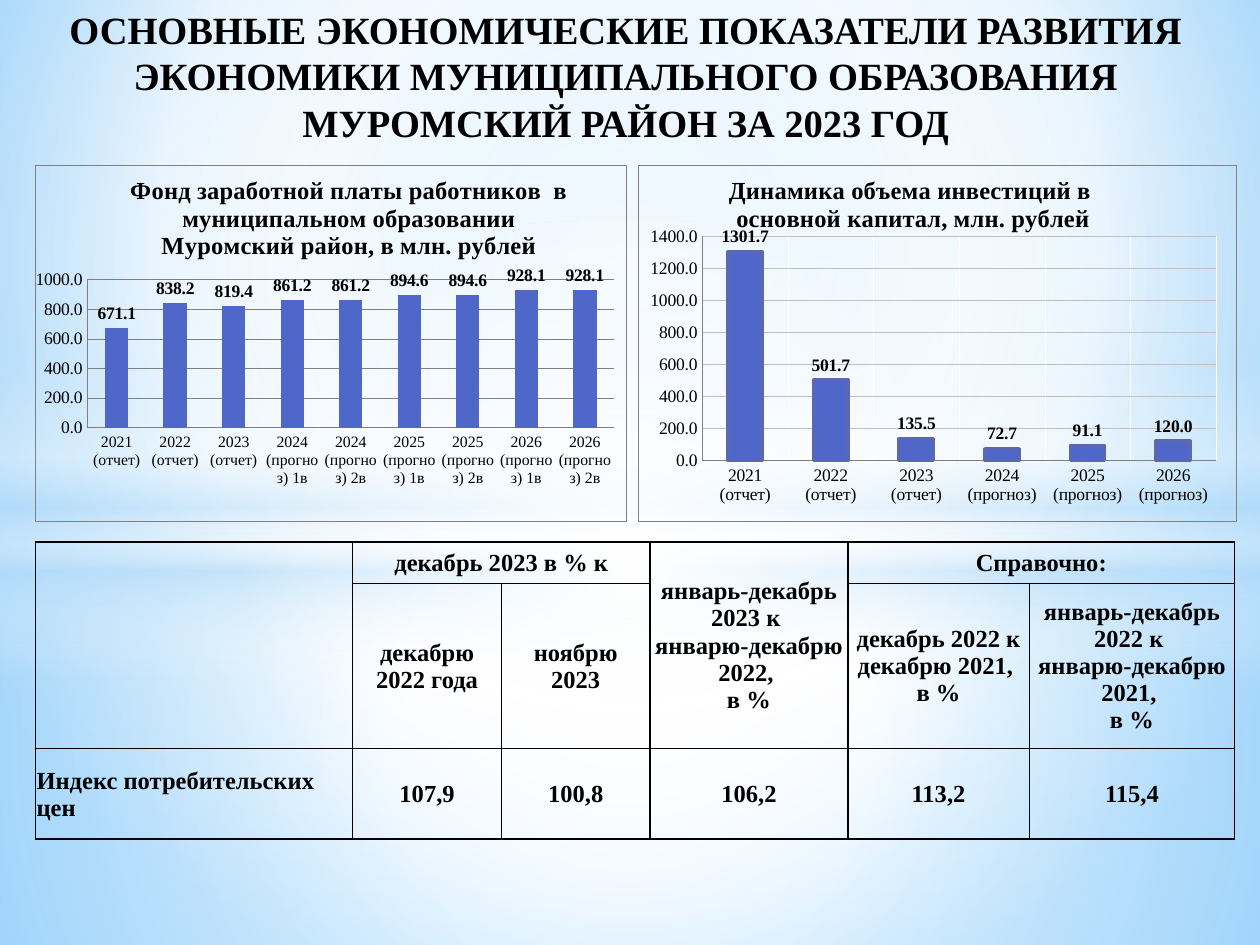
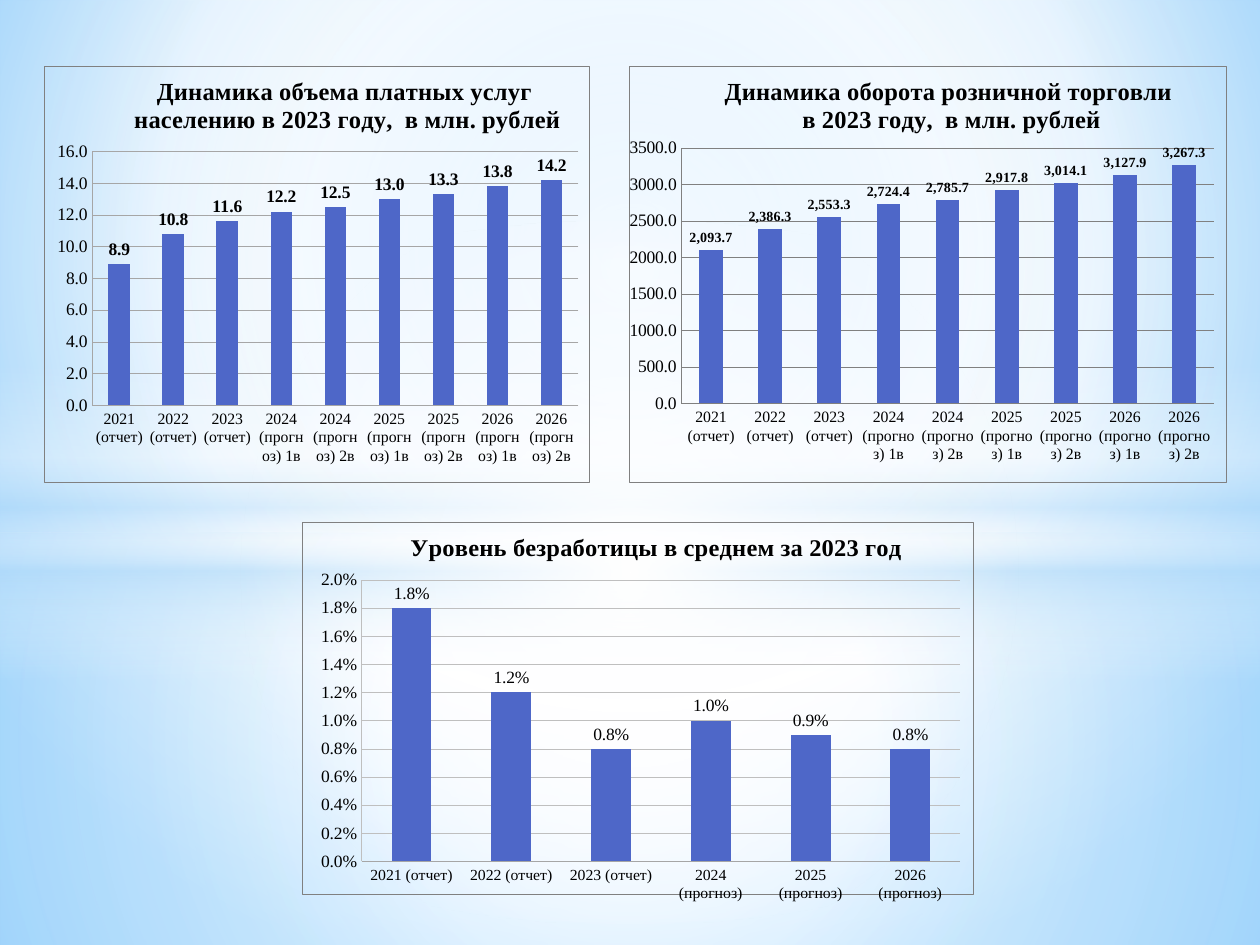
"""Builds two slides on the economy of the Murom district: charts and a price index table."""
from dataclasses import dataclass

from lxml import etree
from pptx import Presentation
from pptx.chart.data import CategoryChartData
from pptx.dml.color import RGBColor
from pptx.enum.chart import XL_CHART_TYPE, XL_LABEL_POSITION, XL_TICK_MARK
from pptx.enum.shapes import MSO_SHAPE
from pptx.enum.text import MSO_ANCHOR, PP_ALIGN
from pptx.oxml import parse_xml
from pptx.oxml.ns import nsdecls, qn
from pptx.util import Inches, Pt

BARS = XL_CHART_TYPE.COLUMN_CLUSTERED
ABOVE = XL_LABEL_POSITION.OUTSIDE_END
NO_TICK = XL_TICK_MARK.NONE
RECT, OVAL = MSO_SHAPE.RECTANGLE, MSO_SHAPE.OVAL
MIDDLE = MSO_ANCHOR.MIDDLE
LEFT, CENTER = PP_ALIGN.LEFT, PP_ALIGN.CENTER


@dataclass(frozen=True)
class Theme:
    font: str = "Times New Roman"
    ink: str = "000000"
    bar: str = "4E67C8"
    rim: str = "5968B0"
    gray: str = "808080"
    mid: str = "A6A6A6"
    pale: str = "BFBFBF"
    white: str = "FFFFFF"
    sky: str = "B4DCFA"
    light: str = "9ED5FF"
    deep: str = "5BB9FF"
    head: int = 22
    body: int = 14
    text: int = 10
    small: int = 9
    tiny: int = 8
    hair: float = 0.25


T = Theme()


def paint(item, stops, box=None):
    """Fill the gradient of an element with stops of place, colour and opacity."""
    grad = item.find(".//" + qn("a:gradFill"))
    grad.clear()
    row = etree.SubElement(grad, qn("a:gsLst"))
    for place, color, alpha in stops:
        stop = etree.SubElement(row, qn("a:gs"), pos=str(place * 1000))
        tone = etree.SubElement(stop, qn("a:srgbClr"), val=color)
        if alpha < 100:
            etree.SubElement(tone, qn("a:alpha"), val=str(alpha * 1000))
    if box:
        way = etree.SubElement(grad, qn("a:path"), path="circle")
        sides = {side: str(part * 1000) for side, part in zip("ltrb", box)}
        etree.SubElement(way, qn("a:fillToRect"), **sides)
    else:
        etree.SubElement(grad, qn("a:lin"), ang="5400000", scaled="0")


def write(frame, text, size, align=CENTER):
    """Write bold text into a frame, one run a line."""
    para = frame.paragraphs[0]
    para.alignment = align
    for num, line in enumerate(text.split("\n")):
        if num:
            para.add_line_break()
        run = para.add_run()
        run.text = line
        run.font.name, run.font.size, run.font.bold = T.font, Pt(size), True
        run.font.color.rgb = RGBColor.from_string(T.ink)


deck = Presentation()
deck.slide_width, deck.slide_height = Inches(10), Inches(7.5)
unit = deck.slide_width // 100
blank = deck.slide_layouts[6]
for hold in list(blank.placeholders):
    hold.element.getparent().remove(hold.element)
slides = [deck.slides.add_slide(blank) for _ in range(2)]

blank.background.fill.gradient()
paint(blank.element, [(0, T.light, 100), (60, T.white, 100), (100, T.deep, 100)],
      (20, 10, 20, 60))
core = (50, 50, 50, 50)
bands = [
    (RECT, 42.3, 32.7, core, [(0, T.white, 91), (37, T.white, 76), (100, T.sky, 79)]),
    (RECT, 0, 42.3, core, [(0, T.white, 89), (48, T.white, 62), (100, T.sky, 79)]),
    (RECT, 29, 25, None, [(0, T.white, 0), (29, T.white, 30), (45, T.sky, 40),
                          (55, T.white, 26), (65, T.sky, 60), (100, T.white, 0)]),
    (OVAL, 17.5, 55.8, core, [(0, T.white, 100), (54, T.white, 0)]),
]
for kind, top, high, box, stops in bands:
    band = slides[0].shapes.add_shape(
        kind, 0, int(top * unit), deck.slide_width, int(high * unit))
    band.shadow.inherit = False
    band.line.fill.background()
    band.fill.gradient()
    paint(band.element, stops, box)
    blank.shapes.element.append(band.element)

area = [int(part * unit) for part in (1.2, 0, 96.9, 12.1)]
title = slides[0].shapes.add_textbox(*area).text_frame
title.word_wrap = True
write(title, "ОСНОВНЫЕ ЭКОНОМИЧЕСКИЕ ПОКАЗАТЕЛИ РАЗВИТИЯ ЭКОНОМИКИ МУНИЦИПАЛЬНОГО "
      "ОБРАЗОВАНИЯ МУРОМСКИЙ РАЙОН ЗА 2023 ГОД", T.head)

rows = [
    ["", "декабрь 2023 в % к", "", "январь-декабрь 2023 к \nянварю-декабрю 2022, \nв %",
     "Справочно:", ""],
    ["", "декабрю\n2022 года", "ноябрю\n2023", "", "декабрь 2022 к декабрю 2021, \nв %",
     "январь-декабрь 2022 к \nянварю-декабрю 2021, \nв %"],
    ["Индекс потребительских цен", "107,9", "100,8", "106,2", "113,2", "115,4"],
]
wide = [25.2, 11.8, 11.8, 15.7, 14.4, 16.3]
tall = [3.3, 13.1, 7.2]
area = [int(part * unit) for part in (2.8, 43, sum(wide), sum(tall))]
grid = slides[0].shapes.add_table(len(rows), len(wide), *area).table
grid.first_row = grid.horz_banding = False
for col, size in zip(grid.columns, wide):
    col.width = int(size * unit)
for row, size in zip(grid.rows, tall):
    row.height = int(size * unit)
for r, row in enumerate(rows):
    for c, text in enumerate(row):
        cell = grid.cell(r, c)
        cell.vertical_anchor = MIDDLE
        cell.margin_left = cell.margin_right = cell.margin_top = Inches(0.01)
        cell.margin_bottom = 0
        cell.fill.background()
        if text:
            write(cell.text_frame, text, T.body, CENTER if c else LEFT)
        props = cell._tc.get_or_add_tcPr()
        for num, side in enumerate("LRTB"):
            props.insert(num, parse_xml(
                f'<a:ln{side} {nsdecls("a")} w="{Pt(1)}"><a:solidFill>'
                f'<a:srgbClr val="{T.ink}"/></a:solidFill></a:ln{side}>'))
for start, end in [((0, 0), (1, 0)), ((0, 1), (0, 2)), ((0, 3), (1, 3)), ((0, 4), (0, 5))]:
    grid.cell(*start).merge(grid.cell(*end))

past = [f"{year} (отчет)" for year in range(2021, 2024)]
plain = past + [f"{year} (прогноз)" for year in range(2024, 2027)]
split = past + [f"{year} (прогноз) {way}в" for year in range(2024, 2027) for way in (1, 2)]
base = dict(cats=split, form="0.0", tag="#,##0.0", size=T.text, bold=True,
            small=T.small, line=T.gray, axis=T.gray, net=T.gray, rim=None, left=15.4)
charts = [
    base | dict(
        page=0, at=(2.8, 13.1, 46.9, 28.3), plot=(8.8, 32.1, 89.2, 41.6), top=1000, step=200,
        name="Фонд заработной платы работников  в \nмуниципальном образовании \n"
             "Муромский район, в млн. рублей ",
        vals=[671.1, 838.2, 819.4, 861.2, 861.2, 894.6, 894.6, 928.1, 928.1]),
    base | dict(
        page=0, at=(50.6, 13.1, 47.5, 28.3), plot=(10.8, 19.9, 85.9, 63), top=1400, step=200,
        name="Динамика объема инвестиций в \nосновной капитал, млн. рублей",
        vals=[1301.7, 501.7, 135.5, 72.7, 91.1, 120], left=14.6,
        cats=plain, tag="0.0", small=T.text, net=T.pale, rim=T.rim),
    base | dict(
        page=1, at=(3.5, 5.2, 43.3, 33.1), plot=(8.8, 20.6, 89.2, 60.9), top=16, step=2,
        name="Динамика объема платных услуг \nнаселению в 2023 году,  в млн. рублей",
        vals=[8.9, 10.8, 11.6, 12.2, 12.5, 13, 13.3, 13.8, 14.2], left=15.8,
        line=T.mid, axis=T.mid, net=T.mid),
    base | dict(
        page=1, at=(49.9, 5.2, 47.4, 33.1), plot=(8.8, 19.7, 89.2, 61.4), top=3500, step=500,
        name="Динамика оборота розничной торговли \nв 2023 году,  в млн. рублей",
        vals=[2093.7, 2386.3, 2553.3, 2724.4, 2785.7, 2917.8, 3014.1, 3127.9, 3267.3],
        size=T.tiny),
    base | dict(
        page=1, at=(24, 41.4, 53.3, 30.2), plot=(8.8, 15.6, 89.2, 75.6), top=0.02, step=0.002,
        name="Уровень безработицы в среднем за 2023 год",
        vals=[0.018, 0.012, 0.008, 0.01, 0.009, 0.008], cats=plain,
        form="0.0%", tag="0.0%", bold=False, line=T.mid, axis=T.pale, net=T.pale),
]
for plan in charts:
    data = CategoryChartData()
    data.categories = plan["cats"]
    data.add_series("Series 1", plan["vals"])
    area = [int(part * unit) for part in plan["at"]]
    chart = slides[plan["page"]].shapes.add_chart(BARS, *area, data).chart
    chart.has_legend = False
    chart.has_title = True
    write(chart.chart_title.text_frame, plan["name"], T.body)

    plot = chart.plots[0]
    plot.gap_width, plot.vary_by_categories = 150, False
    bars = plot.series[0]
    bars.invert_if_negative = False
    bars.format.fill.solid()
    bars.format.fill.fore_color.rgb = RGBColor.from_string(T.bar)
    if plan["rim"]:
        bars.format.line.color.rgb = RGBColor.from_string(plan["rim"])
        bars.format.line.width = Pt(2)

    plot.has_data_labels = True
    tags = plot.data_labels
    tags.show_value, tags.position = True, ABOVE
    tags.number_format, tags.number_format_is_linked = plan["tag"], False

    cat, val = chart.category_axis, chart.value_axis
    val.minimum_scale, val.maximum_scale = 0, plan["top"]
    val.major_unit = plan["step"]
    val.tick_labels.number_format = plan["form"]
    val.tick_labels.number_format_is_linked = False
    cat.has_major_gridlines = bool(plan["rim"])
    lines = [(cat.format.line, plan["line"]), (val.format.line, plan["axis"]),
             (val.major_gridlines.format.line, plan["net"])]
    if plan["rim"]:
        lines.append((cat.major_gridlines.format.line, T.white))
    for line, color in lines:
        line.color.rgb = RGBColor.from_string(color)
        line.width = Pt(T.hair)
    for axis in (cat, val):
        axis.major_tick_mark = axis.minor_tick_mark = NO_TICK
    fonts = [(chart.font, T.text, False), (cat.tick_labels.font, plan["small"], False),
             (val.tick_labels.font, T.text, False), (tags.font, plan["size"], plan["bold"])]
    for font, size, bold in fonts:
        font.name, font.size, font.bold = T.font, Pt(size), bold
        font.color.rgb = RGBColor.from_string(T.ink)

    body = chart.element.find(qn("c:chart"))
    head, field = body.find(qn("c:title")), body.find(qn("c:plotArea"))
    turn = field.find("/".join(qn(tag) for tag in ("c:catAx", "c:txPr", "a:bodyPr")))
    turn.set("rot", "0")
    turn.set("vert", "horz")
    for item, spot, place in ((head, 1, (plan["left"], 1.6)), (field, 0, plan["plot"])):
        for old in item.findall(qn("c:layout")):
            item.remove(old)
        layout = etree.Element(qn("c:layout"))
        hand = etree.SubElement(layout, qn("c:manualLayout"))
        if item is field:
            etree.SubElement(hand, qn("c:layoutTarget"), val="inner")
        for key in "xy":
            etree.SubElement(hand, qn(f"c:{key}Mode"), val="edge")
        for key, part in zip("xywh", place):
            etree.SubElement(hand, qn(f"c:{key}"), val=f"{part / 100:.3f}")
        item.insert(spot, layout)
    frame = (f'<a:ln w="{Pt(T.hair)}"><a:solidFill><a:srgbClr val="{T.gray}"/>'
             '</a:solidFill></a:ln>')
    for add, edge in ((body.addnext, frame), (field.append, "<a:ln><a:noFill/></a:ln>")):
        add(parse_xml(f'<c:spPr {nsdecls("c", "a")}><a:noFill/>{edge}</c:spPr>'))

deck.save("out.pptx")
